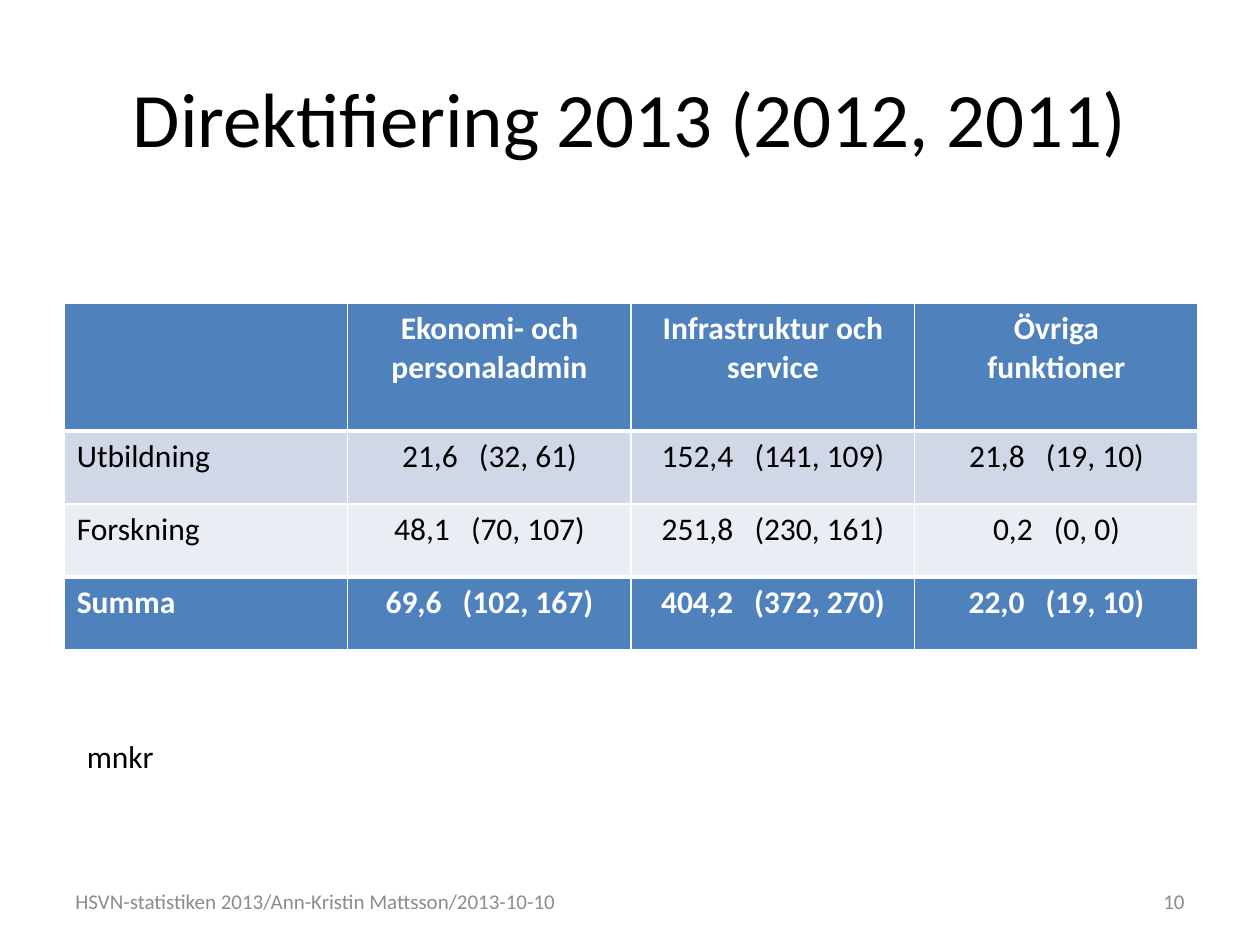
from lxml.etree import SubElement
from pptx import Presentation
from pptx.dml.color import RGBColor
from pptx.enum.text import MSO_ANCHOR as Anchor, PP_ALIGN as Align
from pptx.oxml.ns import qn
from pptx.util import Inches, Pt

COLORS = {
    "text": "000000",
    "white": "FFFFFF",
    "accent": "4F81BD",
    "band_dark": "D0D8E8",
    "band_light": "E9EDF4",
    "footer": "8C8C8C",
}
FONT = "Calibri"
HEADERS = ["", "Ekonomi- och personaladmin", "Infrastruktur och service", "Övriga\nfunktioner"]
ROWS = [
    ["Utbildning", "21,6 (32, 61)", "152,4 (141, 109)", "21,8 (19, 10)"],
    ["Forskning", "48,1 (70, 107)", "251,8 (230, 161)", "0,2 (0, 0)"],
    ["Summa", "69,6 (102, 167)", "404,2 (372, 270)", "22,0 (19, 10)"],
]
ROW_FILLS = ["accent", "band_dark", "band_light", "accent"]
ROW_HEIGHTS = [1.01, 0.58, 0.58, 0.58]


def write_text(frame, text, size=18, color="text", bold=False, align=Align.LEFT, gap=0):
    """Write formatted lines, widening the first space of each by gap points."""
    for index, line in enumerate(text.split("\n")):
        paragraph = frame.add_paragraph() if index else frame.paragraphs[0]
        paragraph.alignment = align
        for part in line.partition(" ") if gap else [line]:
            run = paragraph.add_run()
            run.text = part
            run.font.name = FONT
            run.font.size = Pt(size)
            run.font.bold = bold
            run.font.color.rgb = RGBColor.from_string(COLORS[color])
            if gap and part == " ":
                run.font._element.set("spc", str(round(gap * 100)))


def set_borders(cell, top=1, bottom=1):
    """Give a cell white borders of the given widths in points."""
    properties = cell._tc.get_or_add_tcPr()
    for side, width in {"L": 1, "R": 1, "T": top, "B": bottom}.items():
        line = SubElement(properties, qn(f"a:ln{side}"), w=str(Pt(width)))
        fill = SubElement(line, qn("a:solidFill"))
        SubElement(fill, qn("a:srgbClr"), val=COLORS["white"])


def add_title(slide, left, top, width, height):
    """Place and format the title placeholder."""
    title = slide.shapes.title
    title.left, title.top = Inches(left), Inches(top)
    title.width, title.height = Inches(width), Inches(height)
    title.text_frame.vertical_anchor = Anchor.MIDDLE
    write_text(title.text_frame, "Direktifiering 2013 (2012, 2011)", size=44, align=Align.CENTER)


def add_cost_table(slide, left, top, width):
    """Add the table of costs by activity and function."""
    rows = [HEADERS] + ROWS
    last = len(rows) - 1
    frame = slide.shapes.add_table(len(rows), len(HEADERS), Inches(left), Inches(top),
                                   Inches(width), Inches(sum(ROW_HEIGHTS)))
    table = frame.table
    for column in table.columns:
        column.width = Inches(width / len(HEADERS))
    for r, values in enumerate(rows):
        table.rows[r].height = Inches(ROW_HEIGHTS[r])
        strong = r in (0, last)
        for c, value in enumerate(values):
            cell = table.cell(r, c)
            set_borders(cell, top=3 if r in (1, last) else 1, bottom=3 if r in (0, last - 1) else 1)
            cell.fill.solid()
            cell.fill.fore_color.rgb = RGBColor.from_string(COLORS[ROW_FILLS[r]])
            write_text(cell.text_frame, value, bold=strong, color="white" if strong else "text",
                       align=Align.CENTER if c else Align.LEFT, gap=8 if r and c else 0)


def add_label(slide, text, left, top, width, height, anchor=Anchor.MIDDLE, **style):
    """Add a text box with one line of formatted text."""
    box = slide.shapes.add_textbox(Inches(left), Inches(top), Inches(width), Inches(height))
    box.text_frame.word_wrap = True
    box.text_frame.vertical_anchor = anchor
    write_text(box.text_frame, text, **style)


def add_footer(slide, left, top, width, height):
    """Add the source line at the left and the page number at the right."""
    style = {"size": 12, "color": "footer"}
    number_width = 2.33
    add_label(slide, "HSVN-statistiken 2013/Ann-Kristin Mattsson/2013-10-10",
              left, top, 4.11, height, **style)
    add_label(slide, "10", left + width - number_width, top, number_width, height,
              align=Align.RIGHT, **style)


def main():
    """Build the slide and save it."""
    presentation = Presentation()
    presentation.slide_width, presentation.slide_height = Inches(10), Inches(7.5)
    slide = presentation.slides.add_slide(presentation.slide_layouts[5])
    add_title(slide, 0.5, 0.3, 9, 1.25)
    add_cost_table(slide, 0.51, 2.41, 9)
    add_label(slide, "mnkr", 0.59, 5.8, 0.79, 0.4, anchor=Anchor.TOP)
    add_footer(slide, 0.5, 6.95, 9, 0.4)
    presentation.save("out.pptx")


if __name__ == "__main__":
    main()
